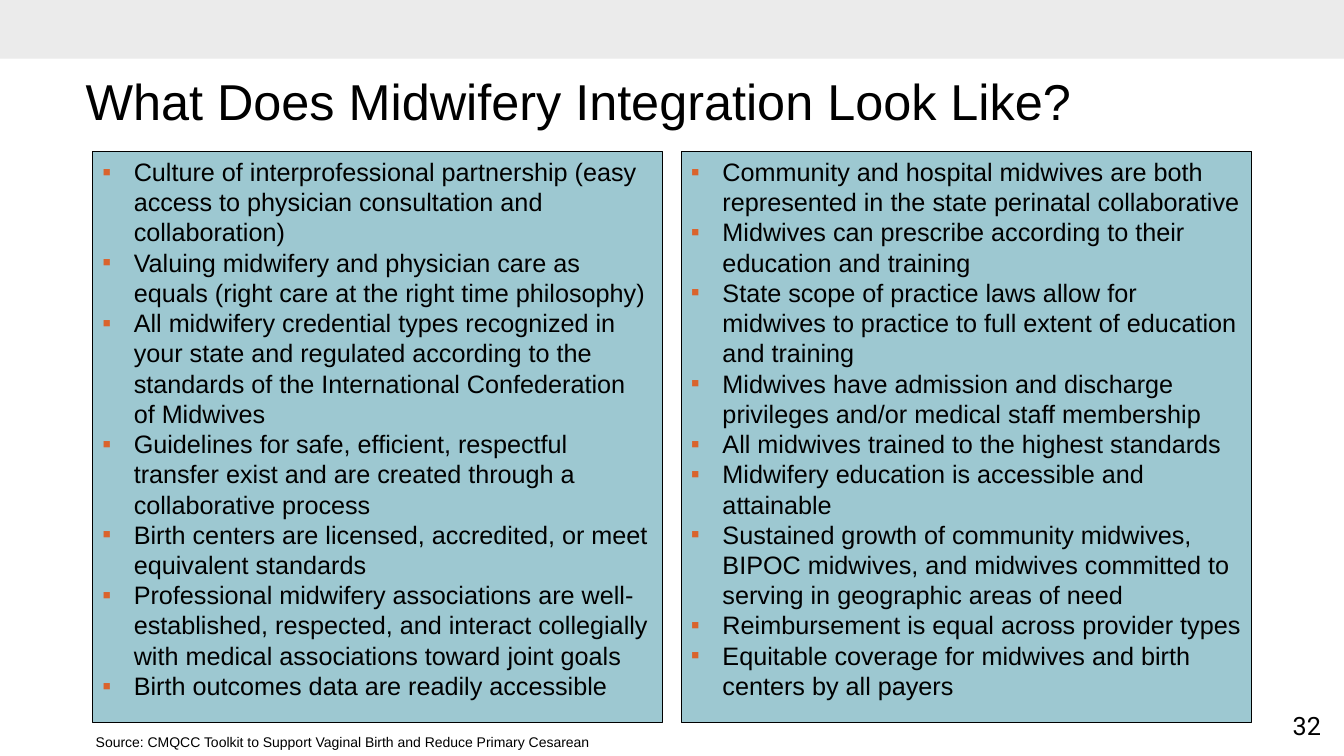
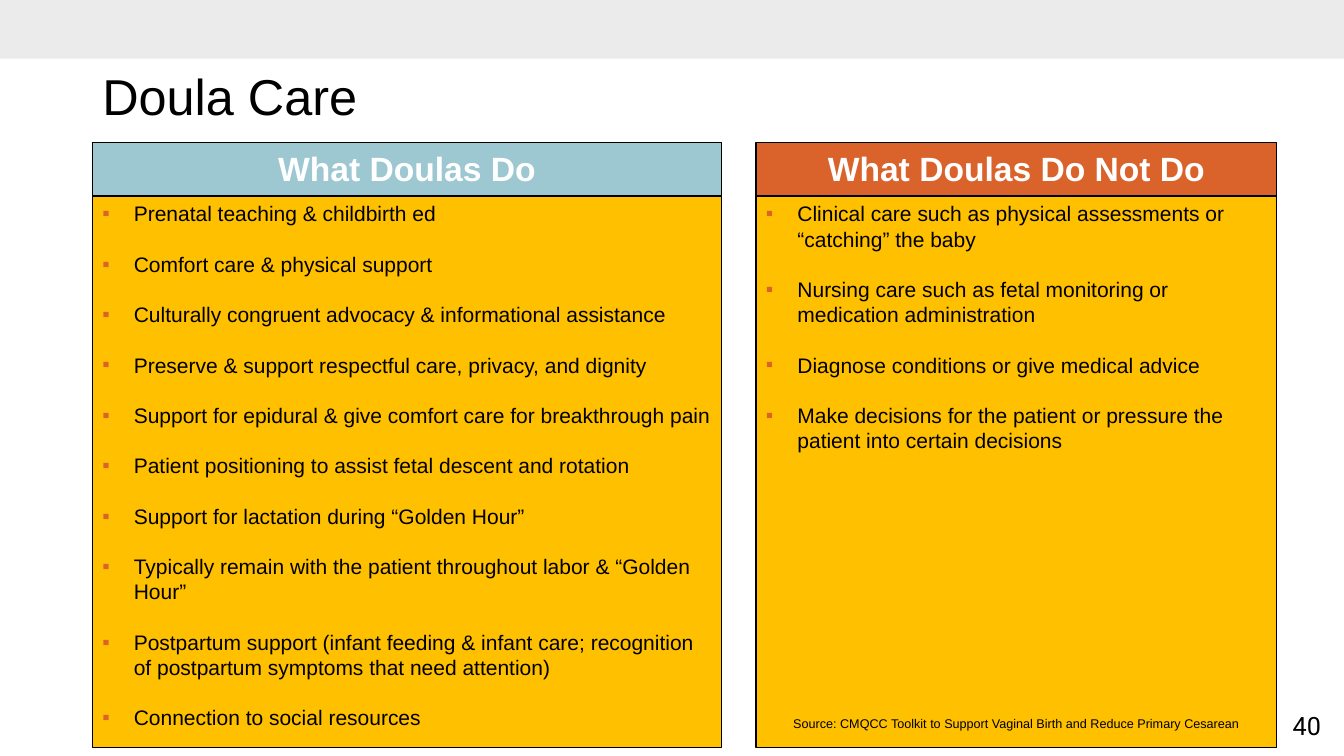
"""Build two slides on midwifery integration and doula care."""
from lxml import etree
from pptx import Presentation
from pptx.dml.color import RGBColor
from pptx.enum import shapes, text
from pptx.oxml import ns
from pptx.util import Pt

BLACK = RGBColor(0x00, 0x00, 0x00)
WHITE = RGBColor(0xFF, 0xFF, 0xFF)
GRAY = RGBColor(0xEB, 0xEB, 0xEB)
BLUE = RGBColor(0x9D, 0xC8, 0xD1)
ORANGE = RGBColor(0xDA, 0x63, 0x2C)
GOLD = RGBColor(0xFF, 0xC0, 0x00)

LEFT = 66
INDENT = 22.5
SOURCE = "Source: CMQCC Toolkit to Support Vaginal Birth and Reduce Primary Cesarean"

PARTNERSHIP = [
    "Culture of interprofessional partnership (easy access to physician consultation and collaboration)",
    "Valuing midwifery and physician care as equals (right care at the right time philosophy)",
    "All midwifery credential types recognized in your state and regulated according to the "
    "standards of the International Confederation of Midwives",
    "Guidelines for safe, efficient, respectful transfer exist and are created through a collaborative process",
    "Birth centers are licensed, accredited, or meet equivalent standards",
    "Professional midwifery associations are well-established, respected, and interact collegially "
    "with medical associations toward joint goals",
    "Birth outcomes data are readily accessible",
]
PRACTICE = [
    "Community and hospital midwives are both represented in the state perinatal collaborative",
    "Midwives can prescribe according to their education and training",
    "State scope of practice laws allow for midwives to practice to full extent of education and training",
    "Midwives have admission and discharge privileges and/or medical staff membership",
    "All midwives trained to the highest standards",
    "Midwifery education is accessible and attainable",
    "Sustained growth of community midwives, BIPOC midwives, and midwives committed to serving "
    "in geographic areas of need",
    "Reimbursement is equal across provider types",
    "Equitable coverage for midwives and birth centers by all payers",
]
DOULAS_DO = [
    "Prenatal teaching & childbirth ed",
    "Comfort care & physical support",
    "Culturally congruent advocacy & informational assistance",
    "Preserve & support respectful care, privacy, and dignity",
    "Support for epidural & give comfort care for breakthrough pain",
    "Patient positioning to assist fetal descent and rotation",
    "Support for lactation during “Golden Hour”",
    "Typically remain with the patient throughout labor & “Golden Hour”",
    "Postpartum support (infant feeding & infant care; recognition of postpartum symptoms "
    "that need attention)",
    "Connection to social resources",
]
DOULAS_DO_NOT = [
    "Clinical care such as physical assessments or “catching” the baby",
    "Nursing care such as fetal monitoring or medication administration",
    "Diagnose conditions or give medical advice",
    "Make decisions for the patient or pressure the patient into certain decisions",
]


def add_bullet(p):
    pPr = p._p.get_or_add_pPr()
    pPr.set("marL", str(Pt(INDENT)))
    pPr.set("indent", str(-Pt(INDENT)))
    color = etree.SubElement(pPr, ns.qn("a:buClr"))
    etree.SubElement(color, ns.qn("a:srgbClr")).set("val", str(ORANGE))
    etree.SubElement(pPr, ns.qn("a:buFont")).set("typeface", "Arial")
    etree.SubElement(pPr, ns.qn("a:buChar")).set("char", "▪")


def write(tf, lines, size=18, color=BLACK, font="Arial", bold=False, center=False,
          bullets=False, gap=0, middle=False, wrap=True):
    tf.word_wrap = wrap
    tf.vertical_anchor = text.MSO_ANCHOR.MIDDLE if middle else text.MSO_ANCHOR.TOP
    for i, line in enumerate(lines):
        p = tf.add_paragraph() if i else tf.paragraphs[0]
        p.alignment = text.PP_ALIGN.CENTER if center else text.PP_ALIGN.LEFT
        if bullets:
            p.line_spacing = Pt(1.2 * size)
            add_bullet(p)
        if i and gap:
            p.space_before = Pt(gap)
        r = p.add_run()
        r.text = line
        r.font.name, r.font.size, r.font.bold = font, Pt(size), bold
        r.font.color.rgb = color


class Deck:
    def __init__(self):
        self.prs = Presentation()
        self.prs.slide_width, self.prs.slide_height = Pt(960), Pt(540)
        self.s = None

    def slide(self, number):
        self.s = self.prs.slides.add_slide(self.prs.slide_layouts[6])
        self.box(0, 0, 960, 42, GRAY, line=False)
        self.label(number, 915, 504, 37, 29, font="Roboto", center=True, wrap=False)

    def box(self, x, y, w, h, fill, line=True):
        sp = self.s.shapes.add_shape(shapes.MSO_SHAPE.RECTANGLE, Pt(x), Pt(y), Pt(w), Pt(h))
        sp.shadow.inherit = False
        sp.fill.solid()
        sp.fill.fore_color.rgb = fill
        if line:
            sp.line.color.rgb = BLACK
            sp.line.width = Pt(0.75)
        else:
            sp.line.fill.background()
        return sp.text_frame

    def label(self, line, x, y, w, h, **style):
        sp = self.s.shapes.add_textbox(Pt(x), Pt(y), Pt(w), Pt(h))
        write(sp.text_frame, [line], **style)

    def title(self, line, x, y):
        self.label(line, x, y, 816, 72, size=36, middle=True)

    def bullets(self, lines, x, y, w, h, fill, size=18, gap=0):
        write(self.box(x, y, w, h, fill), lines, size=size, bullets=True, gap=gap)

    def heading(self, line, x, y, w, h, fill):
        write(self.box(x, y, w, h, fill), [line], size=24, color=WHITE, bold=True, center=True)


def main():
    deck = Deck()

    deck.slide("32")
    deck.title("What Does Midwifery Integration Look Like?", 54, 36)
    for i, lines in enumerate((PARTNERSHIP, PRACTICE)):
        deck.bullets(lines, LEFT + 420.5 * i, 108, 407.5, 408, BLUE)
    deck.label(SOURCE, 58.5, 520.5, 372, 19.5, size=10, center=True, wrap=False)

    deck.slide("40")
    deck.title("Doula Care", LEFT, 32)
    columns = (
        ("What Doulas Do", DOULAS_DO, LEFT, 449.5, BLUE),
        ("What Doulas Do Not Do", DOULAS_DO_NOT, 540, 372, ORANGE),
    )
    for head, lines, x, w, fill in columns:
        deck.bullets(lines, x, 140, w, 394, GOLD, size=15, gap=18)
        deck.heading(head, x, 102, w, 38, fill)
    deck.label(SOURCE, 558, 508, 335.5, 18, size=9, center=True)

    deck.prs.save("out.pptx")


if __name__ == "__main__":
    main()
